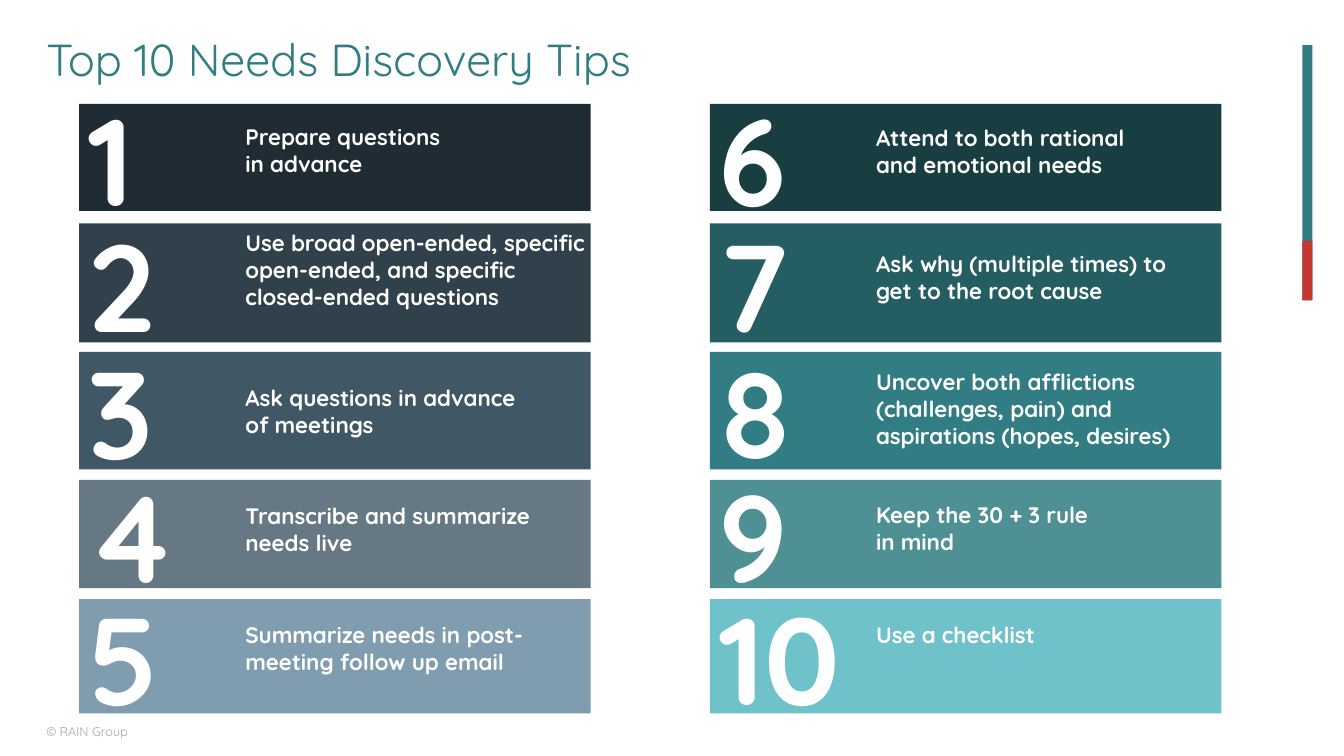
import pptx
import pptx.dml.color
import pptx.enum.shapes
import pptx.enum.text
import pptx.util
import lxml.etree

Pt = pptx.util.Pt
ANCHOR = pptx.enum.text.MSO_ANCHOR
LEFT = pptx.enum.text.PP_ALIGN.LEFT
FONT = "Quicksand"
COLORS = {
    "teal": "317D83", "red": "C63731", "grey": "A5A5A5", "white": "FFFFFF",
    "ink": "202C33", "navy": "30414C", "slate": "405766", "mist": "809DAF",
    "pine": "183E42", "forest": "255E62", "aqua": "6FC2C9",
}
ROWS = [(74.2, 76.5), (159.5, 85), (251.3, 84), (342.7, 77.5), (428, 81.5)]
COLUMN_LEFTS = [56.5, 507]
PANEL_WIDTH = 365.5
TIP_INDENT = 111.7
TIPS = [
    ("Prepare questions\nin advance", "ink", 100, 10, 214),
    ("Use broad open-ended, specific open-ended, and specific closed-ended questions",
     "navy", 100, 0.5, 260),
    ("Ask questions in advance of meetings", "slate", 100, 19.5, 220),
    ("Transcribe and summarize\nneeds live", "slate", 80, 12.5, 220),
    ("Summarize needs in post-meeting follow up email", "mist", 100, 12, 235),
    ("Attend to both rational and emotional needs", "pine", 100, 11, 219),
    ("Ask why (multiple times) to get to the root cause", "forest", 100, 16, 238),
    ("Uncover both afflictions (challenges, pain) and aspirations (hopes, desires)",
     "teal", 100, 8, 269),
    ("Keep the 30 + 3 rule\vin mind", "teal", 85, 11.5, 201),
    ("Use a checklist", "aqua", 100, 12, 254),
]


def rgb(color):
    """Return the named colour."""
    return pptx.dml.color.RGBColor.from_string(COLORS[color])


def write(frame, text, size, color, bold=False, anchor=ANCHOR.TOP, **spacing):
    """Fill a text frame with left-aligned, formatted text."""
    frame.text = text
    frame_format = {"word_wrap": True, "vertical_anchor": anchor,
                    "auto_size": pptx.enum.text.MSO_AUTO_SIZE.NONE}
    for name, value in frame_format.items():
        setattr(frame, name, value)
    for paragraph in frame.paragraphs:
        for name, value in {"alignment": LEFT, **spacing}.items():
            setattr(paragraph, name, value)
        for run in paragraph.runs:
            for name, value in {"name": FONT, "size": Pt(size), "bold": bold}.items():
                setattr(run.font, name, value)
            run.font.color.rgb = rgb(color)


def add_block(slide, box, color, opacity=100):
    """Add a plain filled rectangle."""
    block = slide.shapes.add_shape(
        pptx.enum.shapes.MSO_SHAPE.RECTANGLE, *map(Pt, box))
    block.shadow.inherit = False
    block.line.fill.background()
    block.fill.solid()
    block.fill.fore_color.rgb = rgb(color)
    if opacity < 100:
        tint = block.fill._xPr.find(".//" + pptx.oxml.ns.qn("a:srgbClr"))
        alpha = lxml.etree.SubElement(tint, pptx.oxml.ns.qn("a:alpha"))
        alpha.set("val", str(opacity * 1000))
    return block


def add_accent(slide, box):
    """Add the two-colour bar at the right edge."""
    left, top, width, height = box
    red_height = 42.5
    add_block(slide, box, "teal")
    add_block(slide, (left, top + height - red_height, width, red_height), "red")


def add_title(slide, box):
    """Place the slide title."""
    title = slide.shapes.title
    for name, value in zip(("left", "top", "width", "height"), box):
        setattr(title, name, Pt(value))
    write(title.text_frame, "Top 10 Needs Discovery Tips", 32, "teal",
          anchor=ANCHOR.MIDDLE, line_spacing=0.9)


def add_copyright(slide, box):
    """Place the copyright line."""
    copyright_line = slide.shapes.add_textbox(*map(Pt, box))
    write(copyright_line.text_frame, "© RAIN Group", 9, "grey", line_spacing=1.5)


def add_tip(slide, box, number, tip):
    """Add one numbered panel with its tip."""
    left, top, _, height = box
    text, color, opacity, drop, text_width = tip
    panel = add_block(slide, box, color, opacity)
    write(panel.text_frame, str(number), 88, "white", True, ANCHOR.MIDDLE,
          space_after=Pt(6))
    advice = slide.shapes.add_textbox(
        *map(Pt, (left + TIP_INDENT, top + drop, text_width, height - drop)))
    write(advice.text_frame, text, 16, "white", True)


def main():
    """Build and save the slide."""
    deck = pptx.Presentation()
    deck.slide_width, deck.slide_height = Pt(960), Pt(540)
    slide = deck.slides.add_slide(deck.slide_layouts[5])
    add_accent(slide, (930.3, 32.3, 7.2, 182.2))
    add_copyright(slide, (26, 508.3, 78, 26.6))
    add_title(slide, (26, 11.5, 877, 65.5))
    for index, tip in enumerate(TIPS):
        column, row = divmod(index, len(ROWS))
        top, height = ROWS[row]
        add_tip(slide, (COLUMN_LEFTS[column], top, PANEL_WIDTH, height), index + 1, tip)
    deck.save("out.pptx")


if __name__ == "__main__":
    main()
